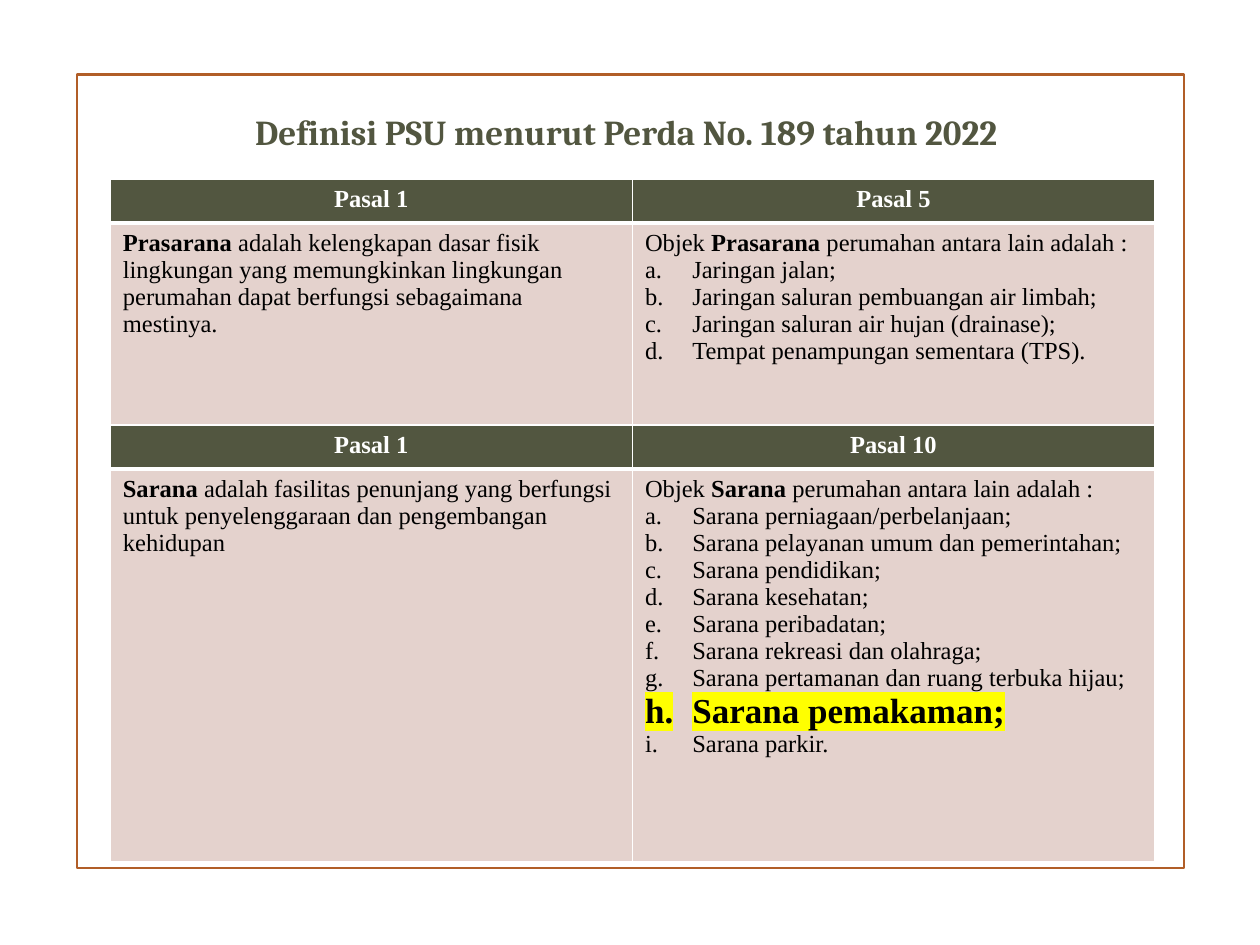
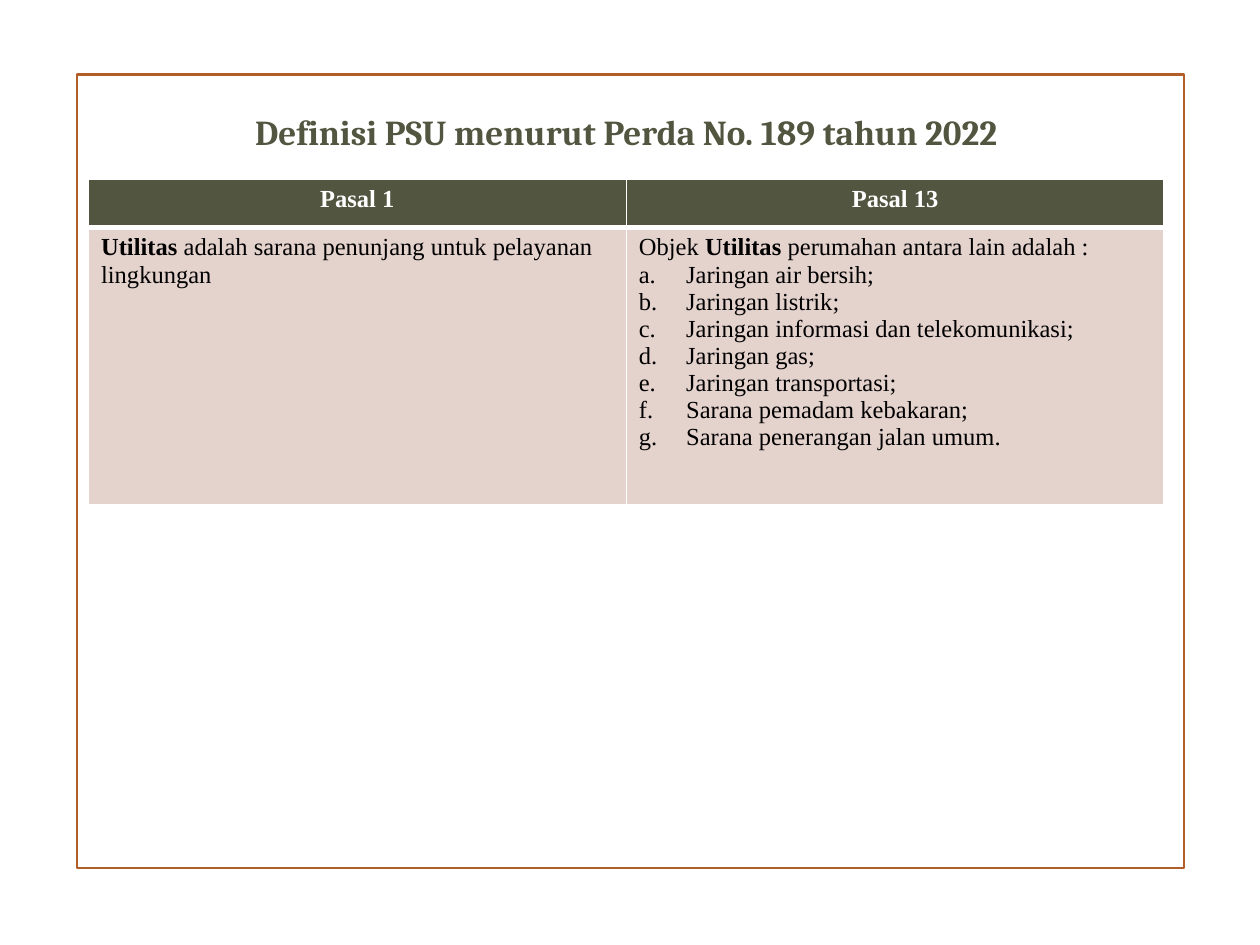
from dataclasses import dataclass

from lxml import etree
from pptx import Presentation
from pptx.dml.color import RGBColor
from pptx.enum.shapes import MSO_SHAPE
from pptx.enum.text import MSO_ANCHOR, PP_ALIGN
from pptx.oxml.ns import qn
from pptx.util import Pt

RECTANGLE = MSO_SHAPE.RECTANGLE
CENTER, LEFT = PP_ALIGN.CENTER, PP_ALIGN.LEFT
TOP, MIDDLE = MSO_ANCHOR.TOP, MSO_ANCHOR.MIDDLE
TITLE_ONLY = 5


@dataclass(frozen=True)
class Theme:
    olive: str = "525640"
    rose: str = "E4D2CD"
    rust: str = "B15E28"
    white: str = "FFFFFF"
    black: str = "000000"
    yellow: str = "FFFF00"
    title_font: str = "Cambria"
    body_font: str = "Times New Roman"
    large: int = 20
    normal: int = 14
    thin: float = 1
    thick: float = 3
    frame_line: float = 1.25
    indent: float = 27


TITLE = "Definisi PSU menurut Perda No. 189 tahun 2022"
HIGHLIGHTED = "Sarana pemakaman;"

# Each section: the two headings, the term, its definition, its objects
PRASARANA = (
    ("Pasal 1", "Pasal 5"),
    "Prasarana",
    "adalah kelengkapan dasar fisik lingkungan yang memungkinkan lingkungan "
    "perumahan dapat berfungsi sebagaimana mestinya.",
    ("Jaringan jalan;", "Jaringan saluran pembuangan air limbah;",
     "Jaringan saluran air hujan (drainase);",
     "Tempat penampungan sementara (TPS)."),
)
SARANA = (
    ("Pasal 1", "Pasal 10"),
    "Sarana",
    "adalah fasilitas penunjang yang berfungsi untuk penyelenggaraan dan "
    "pengembangan kehidupan",
    ("Sarana perniagaan/perbelanjaan;",
     "Sarana pelayanan umum dan pemerintahan;", "Sarana pendidikan;",
     "Sarana kesehatan;", "Sarana peribadatan;",
     "Sarana rekreasi dan olahraga;",
     "Sarana pertamanan dan ruang terbuka hijau;", HIGHLIGHTED,
     "Sarana parkir."),
)
UTILITAS = (
    ("Pasal 1", "Pasal 13"),
    "Utilitas",
    "adalah sarana penunjang untuk pelayanan lingkungan",
    ("Jaringan air bersih;", "Jaringan listrik;",
     "Jaringan informasi dan telekomunikasi;", "Jaringan gas;",
     "Jaringan transportasi;", "Sarana pemadam kebakaran;",
     "Sarana penerangan jalan umum."),
)


class Deck:
    def __init__(self, theme):
        self.theme = theme
        self.prs = Presentation()
        self.prs.slide_width, self.prs.slide_height = Pt(720), Pt(540)
        self.s = None

    def slide(self, title):
        self.s = self.prs.slides.add_slide(self.prs.slide_layouts[TITLE_ONLY])
        self.frame()
        self.title(title)

    def frame(self):
        sp = self.s.shapes.add_shape(RECTANGLE, Pt(44), Pt(42.6), Pt(632.8), Pt(453.4))
        sp.shadow.inherit = False
        sp.fill.background()
        sp.line.color.rgb = RGBColor.from_string(self.theme.rust)
        sp.line.width = Pt(self.theme.frame_line)

    def title(self, text):
        sp = self.s.shapes.title
        sp.left, sp.top, sp.width, sp.height = Pt(61), Pt(60), Pt(594), Pt(30.2)
        tf = sp.text_frame
        tf.text = text
        tf.word_wrap = True
        tf.vertical_anchor = MIDDLE
        p = tf.paragraphs[0]
        p.alignment = CENTER
        self.style(p.runs[0], self.theme.olive, True, self.theme.large,
                   self.theme.title_font)

    def style(self, r, color, bold=False, size=None, font=None):
        r.font.size = Pt(size or self.theme.normal)
        r.font.name = font or self.theme.body_font
        r.font.bold = bold
        r.font.color.rgb = RGBColor.from_string(color)

    def highlight(self, r):
        rpr = r.font._element
        mark = etree.Element(qn("a:highlight"))
        etree.SubElement(mark, qn("a:srgbClr"), val=self.theme.yellow)
        rpr.find(qn("a:solidFill")).addnext(mark)

    def letter(self, p):
        """Number the paragraph a., b., c. with a hanging indent."""
        ppr = p._p.get_or_add_pPr()
        indent = Pt(self.theme.indent)
        ppr.set("marL", str(indent))
        ppr.set("indent", str(-indent))
        etree.SubElement(ppr, qn("a:buFont"), typeface="+mj-lt")
        etree.SubElement(ppr, qn("a:buAutoNum"), type="alphaLcPeriod")

    def cell(self, cell, fill, top, bottom):
        """Fill the cell and draw its white borders."""
        widths = {"L": self.theme.thin, "R": self.theme.thin, "T": top, "B": bottom}
        tcpr = cell._tc.get_or_add_tcPr()
        for side, width in widths.items():
            ln = etree.SubElement(tcpr, qn(f"a:ln{side}"), w=str(Pt(width)))
            paint = etree.SubElement(ln, qn("a:solidFill"))
            etree.SubElement(paint, qn("a:srgbClr"), val=self.theme.white)
        cell.fill.solid()
        cell.fill.fore_color.rgb = RGBColor.from_string(fill)
        cell.vertical_anchor = TOP

    def heading(self, cell, text):
        self.cell(cell, self.theme.olive, self.theme.thin, self.theme.thick)
        cell.text_frame.text = text
        p = cell.text_frame.paragraphs[0]
        p.alignment = CENTER
        self.style(p.runs[0], self.theme.white, True)

    def sentence(self, cell, *parts):
        """Write (text, bold) parts as the first paragraph of a body cell."""
        self.cell(cell, self.theme.rose, self.theme.thick, self.theme.thin)
        p = cell.text_frame.paragraphs[0]
        p.alignment = LEFT
        for text, bold in parts:
            r = p.add_run()
            r.text = text
            self.style(r, self.theme.black, bold)

    def objects(self, cell, items):
        for item in items:
            p = cell.text_frame.add_paragraph()
            p.text = item
            self.letter(p)
            r = p.runs[0]
            if item == HIGHLIGHTED:
                self.style(r, self.theme.black, True, self.theme.large)
                self.highlight(r)
            else:
                self.style(r, self.theme.black)

    def definitions(self, sections, left, column_width, heading_height, body_heights):
        heights = [h for body in body_heights for h in (heading_height, body)]
        table = self.s.shapes.add_table(
            len(heights), 2, Pt(left), Pt(102.4), Pt(2 * column_width),
            Pt(sum(heights))).table
        table.horz_banding = False
        for column in table.columns:
            column.width = Pt(column_width)
        for row, height in zip(table.rows, heights):
            row.height = Pt(height)
        for i, (headings, term, meaning, items) in enumerate(sections):
            for col, text in enumerate(headings):
                self.heading(table.cell(2 * i, col), text)
            definition, scope = (table.cell(2 * i + 1, col) for col in range(2))
            self.sentence(definition, (term, True), (f" {meaning}", False))
            self.sentence(scope, ("Objek ", False), (term, True),
                          (" perumahan antara lain adalah :", False))
            self.objects(scope, items)


def main():
    deck = Deck(Theme())
    deck.slide(TITLE)
    deck.definitions((PRASARANA, SARANA), 63, 298.4, 25, (115.6, 224.3))
    deck.slide(TITLE)
    deck.definitions((UTILITAS,), 50.6, 307.3, 27.8, (158,))
    deck.prs.save("out.pptx")


if __name__ == "__main__":
    main()
